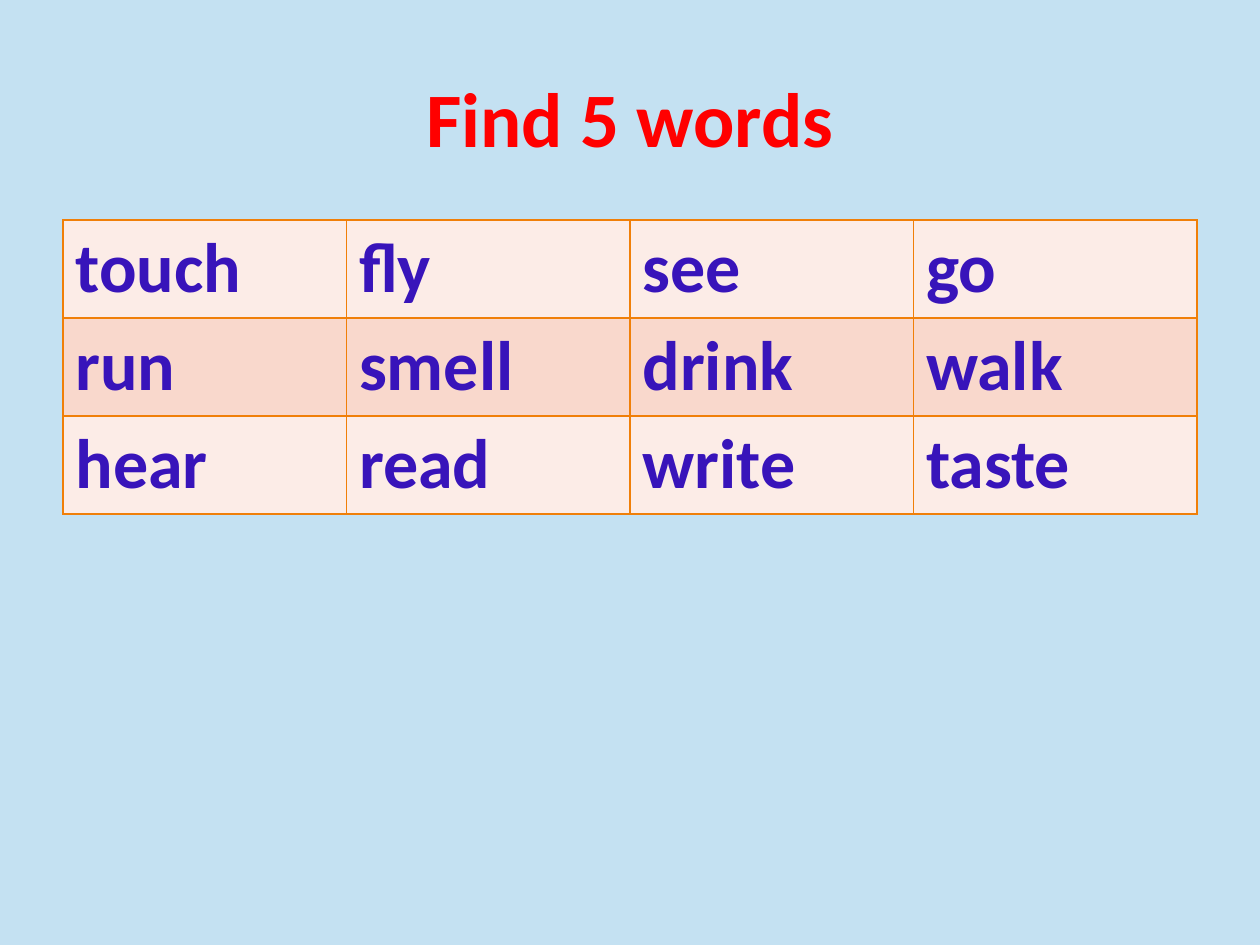
from lxml.etree import SubElement
from pptx import Presentation
from pptx.dml.color import RGBColor as RGB
from pptx.enum.text import MSO_ANCHOR as Anchor, PP_ALIGN as Align
from pptx.oxml.ns import qn
from pptx.util import Emu, Pt

TITLE = "Find 5 words"
WORDS = [
    ["touch", "fly", "see", "go"],
    ["run", "smell", "drink", "walk"],
    ["hear", "read", "write", "taste"],
]
COLORS = {
    "back": "C4E1F2",
    "title": "FF0000",
    "word": "3814BA",
    "odd": "FCECE7",
    "even": "F9D8CC",
    "line": "F07F09",
}
FONT = "Calibri"
WIDE, HIGH = 1260, 945
LEFT, SPAN = 63, 1134
HEAD_TOP, HEAD_H = 38, 157
GRID_TOP, ROW_H = 220, 98


def px(n):
    return Emu(round(n * 914400 / 126))


def paint(fill, name):
    fill.solid()
    fill.fore_color.rgb = RGB.from_string(COLORS[name])


def write(frame, text, size, color, align=Align.LEFT):
    para = frame.paragraphs[0]
    para.alignment = align
    run = para.add_run()
    run.text = text
    font = run.font
    font.name, font.size, font.bold = FONT, Pt(size), True
    font.color.rgb = RGB.from_string(COLORS[color])


def edge(cell, color, width=1):
    """Draw all four borders; must run before the cell is filled."""
    props = cell._tc.get_or_add_tcPr()
    for side in ("lnL", "lnR", "lnT", "lnB"):
        line = SubElement(props, qn(f"a:{side}"), w=str(Pt(width)))
        solid = SubElement(line, qn("a:solidFill"))
        SubElement(solid, qn("a:srgbClr"), val=COLORS[color])


def add_title(slide):
    title = slide.shapes.title
    title.left, title.top = px(LEFT), px(HEAD_TOP)
    title.width, title.height = px(SPAN), px(HEAD_H)
    frame = title.text_frame
    frame.word_wrap = True
    frame.vertical_anchor = Anchor.MIDDLE
    write(frame, TITLE, 44, "title", Align.CENTER)


def add_grid(slide):
    rows, cols = len(WORDS), len(WORDS[0])
    grid = slide.shapes.add_table(
        rows, cols, px(LEFT), px(GRID_TOP), px(SPAN), px(ROW_H * rows)
    ).table
    grid.first_row = False
    for r, row in enumerate(WORDS):
        for c, word in enumerate(row):
            cell = grid.cell(r, c)
            edge(cell, "line")
            paint(cell.fill, "even" if r % 2 else "odd")
            write(cell.text_frame, word, 40, "word")


def main():
    deck = Presentation()
    deck.slide_width, deck.slide_height = px(WIDE), px(HIGH)
    slide = deck.slides.add_slide(deck.slide_layouts[5])
    paint(slide.background.fill, "back")
    add_title(slide)
    add_grid(slide)
    deck.save("out.pptx")


if __name__ == "__main__":
    main()
